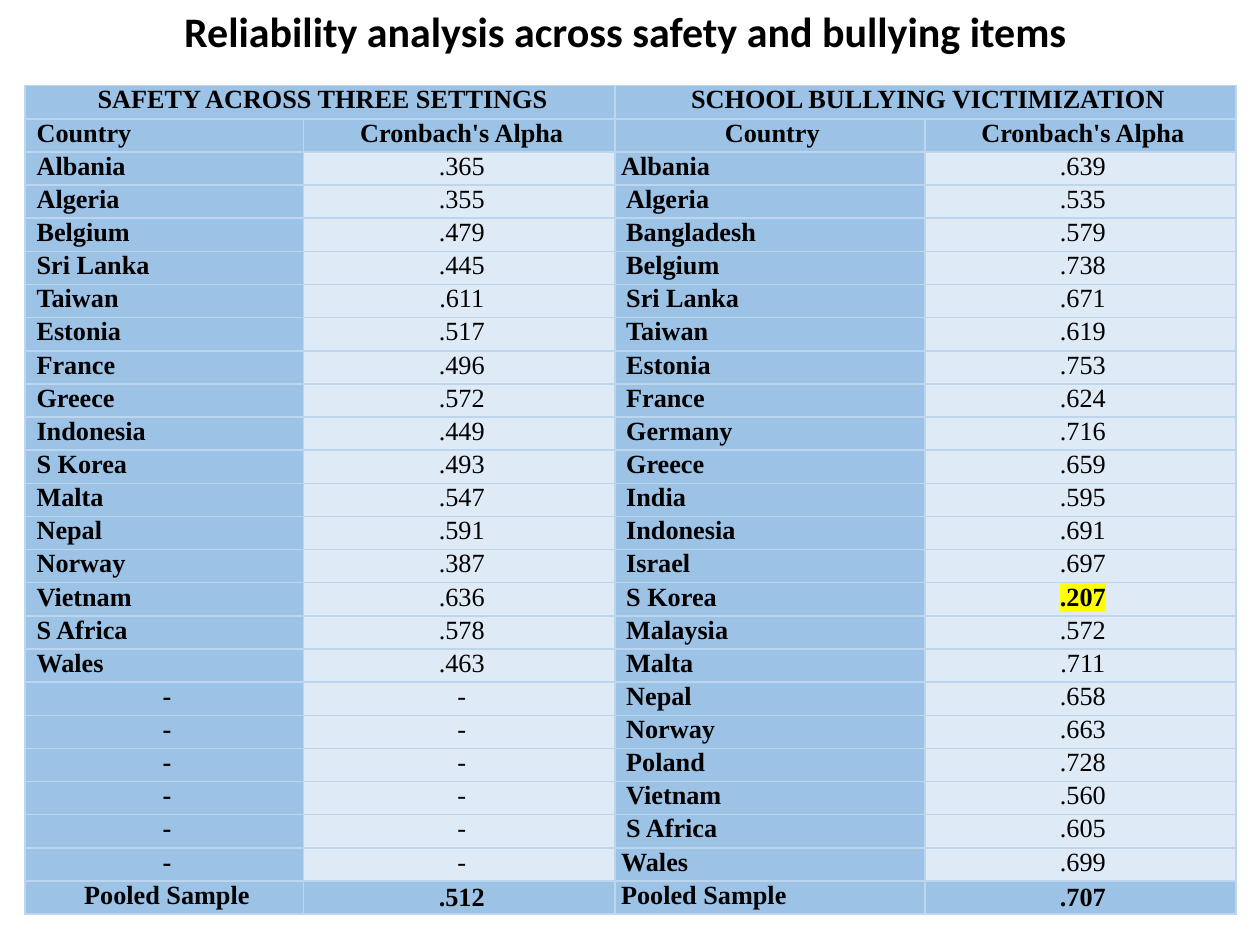
from itertools import zip_longest

from lxml.etree import SubElement
from pptx import Presentation
from pptx.dml.color import RGBColor
from pptx.enum.text import MSO_ANCHOR as Anchor, MSO_AUTO_SIZE as AutoSize, PP_ALIGN as Align
from pptx.oxml.ns import qn
from pptx.util import Inches, Pt

HEADER_BLUE, VALUE_BLUE, BORDER_BLUE = "9CC2E5", "DEEAF6", "BDD6EE"
BLACK, YELLOW = "000000", "FFFF00"


def color(hex_string):
    return RGBColor.from_string(hex_string)


def add_solid(parent, tag, hex_string):
    """Append an element holding a plain colour and return it."""
    element = SubElement(parent, qn(tag))
    holder = element if tag == "a:highlight" else SubElement(element, qn("a:solidFill"))
    SubElement(holder, qn("a:srgbClr")).set("val", hex_string)
    return element


# Alpha values by country
safety = [
    ("Albania", ".365"), ("Algeria", ".355"), ("Belgium", ".479"), ("Sri Lanka", ".445"),
    ("Taiwan", ".611"), ("Estonia", ".517"), ("France", ".496"), ("Greece", ".572"),
    ("Indonesia", ".449"), ("S Korea", ".493"), ("Malta", ".547"), ("Nepal", ".591"),
    ("Norway", ".387"), ("Vietnam", ".636"), ("S Africa", ".578"), ("Wales", ".463"),
]
bullying = [
    ("Albania", ".639"), ("Algeria", ".535"), ("Bangladesh", ".579"), ("Belgium", ".738"),
    ("Sri Lanka", ".671"), ("Taiwan", ".619"), ("Estonia", ".753"), ("France", ".624"),
    ("Germany", ".716"), ("Greece", ".659"), ("India", ".595"), ("Indonesia", ".691"),
    ("Israel", ".697"), ("S Korea", ".207"), ("Malaysia", ".572"), ("Malta", ".711"),
    ("Nepal", ".658"), ("Norway", ".663"), ("Poland", ".728"), ("Vietnam", ".560"),
    ("S Africa", ".605"), ("Wales", ".699"),
]
rows = [
    ("SAFETY ACROSS THREE SETTINGS", "", "SCHOOL BULLYING VICTIMIZATION", ""),
    ("Country", "Cronbach's Alpha") * 2,
    *(left + right for left, right in zip_longest(safety, bullying, fillvalue=("-", "-"))),
    ("Pooled Sample", ".512", "Pooled Sample", ".707"),
]
first_body, last_row = 2, len(rows) - 1
low_alpha = ".207"

deck = Presentation()
deck.slide_width, deck.slide_height = Inches(10), Inches(7.5)
page = deck.slides.add_slide(deck.slide_layouts[5])

# Title
title = page.shapes.title
title.left, title.top = Inches(0.75), Inches(0.09)
title.width, title.height = Inches(8.43), Inches(0.31)
frame = title.text_frame
frame.text = "Reliability analysis across safety and bullying items"
frame.word_wrap = True
frame.auto_size = AutoSize.NONE
frame.vertical_anchor = Anchor.MIDDLE
frame.margin_top = frame.margin_bottom = 0
para = frame.paragraphs[0]
para.alignment = Align.CENTER
font = para.runs[0].font
font.name, font.size, font.bold = "Calibri", Pt(24), True
font.color.rgb = color(BLACK)

# Table grid
column_widths = [2.21, 2.47, 2.46, 2.47]
table = page.shapes.add_table(
    len(rows), len(column_widths),
    Inches(0.2), Inches(0.68), Inches(sum(column_widths)), Inches(6.58),
).table
table.first_row = table.horz_banding = False
for column, width in zip(table.columns, column_widths):
    column.width = Inches(width)
for start in (0, 2):
    table.cell(0, start).merge(table.cell(0, start + 1))

# Cells
for r, row in enumerate(rows):
    for c, text in enumerate(row):
        cell = table.cell(r, c)
        is_value = c % 2 == 1 and first_body <= r < last_row
        is_country = c % 2 == 0 and r >= first_body

        cell.margin_left = cell.margin_right = Inches(0.05)
        cell.margin_top = cell.margin_bottom = 0
        if r == last_row and c % 2 == 1:
            cell.vertical_anchor = Anchor.MIDDLE
        properties = cell._tc.get_or_add_tcPr()
        for side in ("a:lnL", "a:lnR", "a:lnT", "a:lnB"):
            add_solid(properties, side, BORDER_BLUE).set("w", str(Pt(1)))
        cell.fill.solid()
        cell.fill.fore_color.rgb = color(VALUE_BLUE if is_value else HEADER_BLUE)
        if cell.is_spanned:
            continue

        cell.text_frame.text = text
        para = cell.text_frame.paragraphs[0]
        at_left = is_country and text != "-" and (r, c) != (last_row, 0)
        at_left = at_left or (r, c) == (1, 0)
        para.alignment = Align.LEFT if at_left else Align.CENTER
        # The right-hand country list is flush at its first, last and pooled rows
        if not (c == 2 and r in (first_body, last_row - 1, last_row)):
            para._p.get_or_add_pPr().set("marL", str(Inches(0.04)))

        span = para.runs[0]
        span.font.size = Pt(15)
        span.font.bold = not is_value or text == low_alpha
        span.font.color.rgb = color(BLACK)
        if text == low_alpha:
            add_solid(span.font._element if hasattr(span.font, "_element")
                      else span._r.get_or_add_rPr(), "a:highlight", YELLOW)
        span.font.name = "Times New Roman"

# Equal rows
for row in table.rows:
    row.height = Inches(6.58 / len(rows))

deck.save("out.pptx")
